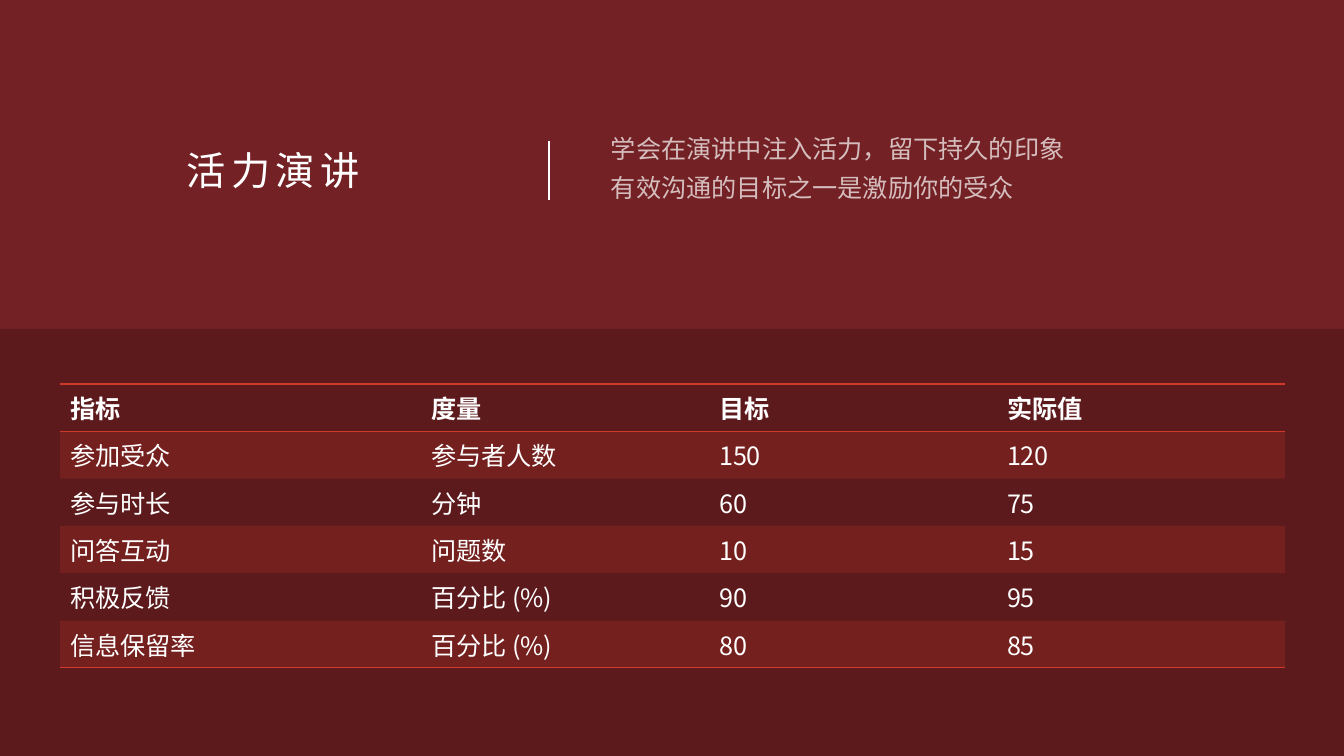
from lxml import etree
from pptx import Presentation
from pptx import util as u
from pptx.dml.color import RGBColor
from pptx.enum import shapes, text
from pptx.oxml import ns

TITLE = "活力演讲"
SUMMARY = ["学会在演讲中注入活力，留下持久的印象", "有效沟通的目标之一是激励你的受众"]
METRICS = [
    ("指标", "度量", "目标", "实际值"),
    ("参加受众", "参与者人数", "150", "120"),
    ("参与时长", "分钟", "60", "75"),
    ("问答互动", "问题数", "10", "15"),
    ("积极反馈", "百分比 (%)", "90", "95"),
    ("信息保留率", "百分比 (%)", "80", "85"),
]
COLUMNS = [361, 288, 288, 288]
FONT = "Noto Sans CJK SC"
COLORS = {"back": "732124", "shade": "000000", "text": "FFFFFF", "accent": "CF3A2A"}
PLAIN_TABLE = "{2D5ABB26-0587-4C30-8999-92F81FD0307C}"


def px(length):
    return u.Emu(round(length * 914400 / 100.8))


def paint(fill, color, alpha=100):
    """Fill with a solid colour; alpha is the opacity in percent."""
    fill.solid()
    fill.fore_color.rgb = RGBColor.from_string(COLORS[color])
    if alpha < 100:
        node = fill._xPr.find(ns.qn("a:solidFill"))[0]
        etree.SubElement(node, ns.qn("a:alpha"), val=str(alpha * 1000))


def style(para, size, alpha=100, bold=False, spacing=0):
    """Format every run; spacing is the letter spacing in points."""
    for span in para.runs:
        span.font.size = u.Pt(size)
        span.font.bold = bold
        span.font.name = FONT
        paint(span.font.fill, "text", alpha)
        props = span.font._element
        etree.SubElement(props, ns.qn("a:ea"), typeface=FONT)
        if spacing:
            props.set("spc", str(spacing * 100))


def add_text(page, left, top, width, height, content):
    frame = page.shapes.add_textbox(px(left), px(top), px(width), px(height)).text_frame
    frame.word_wrap = True
    frame.vertical_anchor = text.MSO_ANCHOR.MIDDLE
    frame.margin_left = frame.margin_right = frame.margin_top = frame.margin_bottom = 0
    frame.text = content
    return frame.paragraphs


def add_border(cell, side):
    line = etree.SubElement(cell._tc.get_or_add_tcPr(), ns.qn("a:" + side), w=str(u.Pt(1)))
    solid = etree.SubElement(line, ns.qn("a:solidFill"))
    etree.SubElement(solid, ns.qn("a:srgbClr"), val=COLORS["accent"])


def add_header(page):
    title = add_text(page, 59, 59, 428, 222, TITLE)[0]
    title.alignment = text.PP_ALIGN.CENTER
    style(title, 28, spacing=4)

    divider = page.shapes.add_connector(
        shapes.MSO_CONNECTOR.STRAIGHT, px(549), px(141), px(549), px(200))
    paint(divider.line.fill, "text")
    divider.line.width = u.Pt(1)
    etree.SubElement(divider._element.spPr, ns.qn("a:effectLst"))

    for para in add_text(page, 611, 59, 673, 222, "\n".join(SUMMARY)):
        para.space_before = u.Pt(8)
        para.line_spacing = 0.9
        style(para, 18, alpha=70)


def add_metrics(page):
    last = len(METRICS) - 1
    table = page.shapes.add_table(
        len(METRICS), len(COLUMNS), px(60), px(384), px(sum(COLUMNS)), px(284)).table
    table._tbl.tblPr.find(ns.qn("a:tableStyleId")).text = PLAIN_TABLE
    table.horz_banding = False
    for column, width in zip(table.columns, COLUMNS):
        column.width = px(width)
    for r, values in enumerate(METRICS):
        for c, value in enumerate(values):
            cell = table.cell(r, c)
            cell.text = value
            cell.vertical_anchor = text.MSO_ANCHOR.MIDDLE
            style(cell.text_frame.paragraphs[0], 18, bold=r == 0)
            if r == 0:
                add_border(cell, "lnT")
            if r in (0, last):
                add_border(cell, "lnB")
            if r % 2:
                paint(cell.fill, "accent", 20)
            else:
                cell.fill.background()


def main():
    deck = Presentation()
    deck.slide_width, deck.slide_height = px(1344), px(756)
    page = deck.slides.add_slide(deck.slide_layouts[6])
    paint(page.background.fill, "back")

    panel = page.shapes.add_shape(
        shapes.MSO_SHAPE.RECTANGLE, 0, px(329), px(1344), px(427))
    panel.shadow.inherit = False
    paint(panel.fill, "shade", 20)
    panel.line.fill.background()

    add_header(page)
    add_metrics(page)
    deck.save("out.pptx")


if __name__ == "__main__":
    main()
